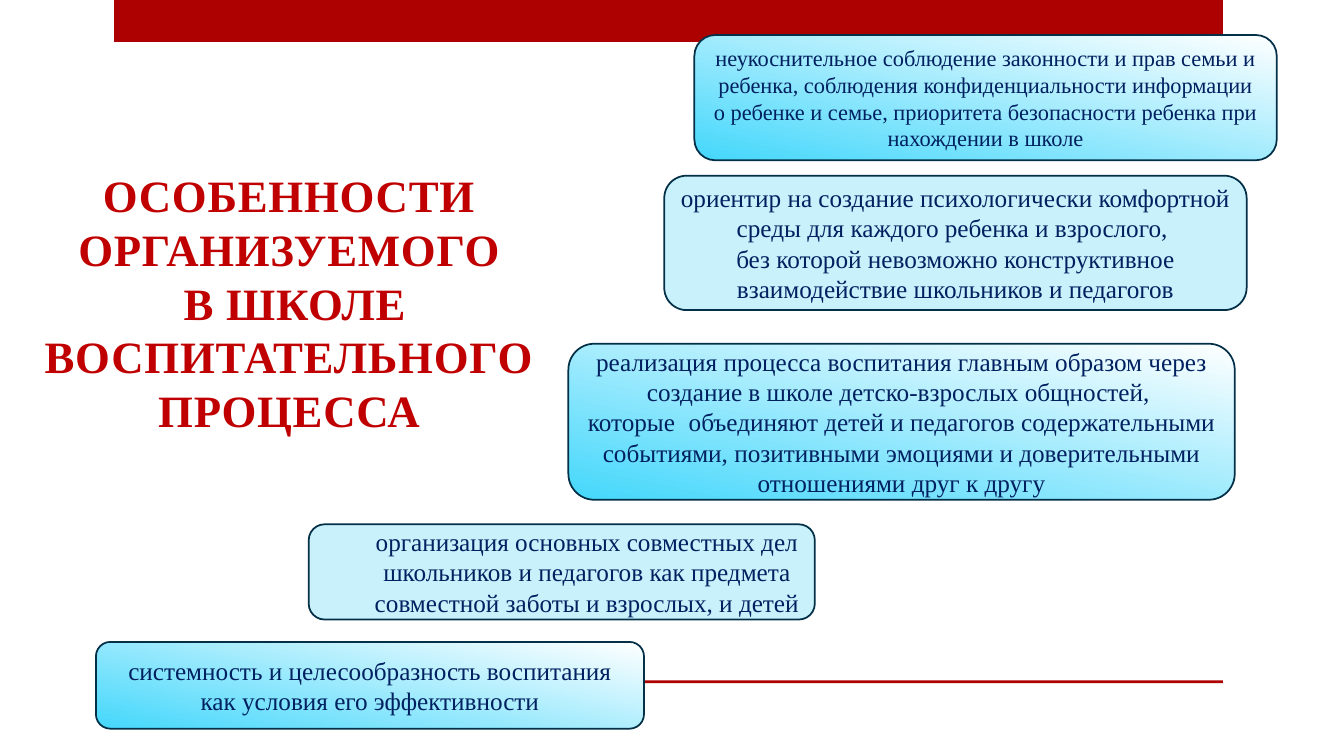
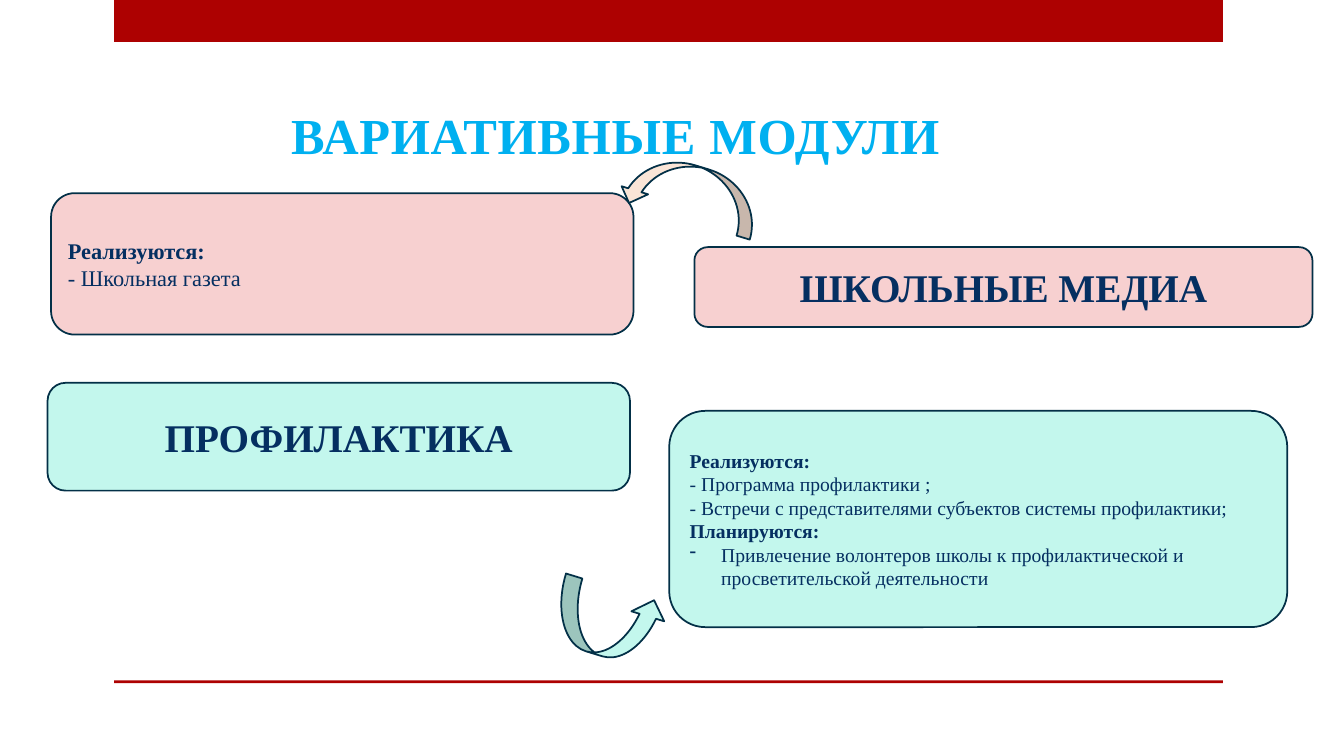
from lxml import etree
from pptx import Presentation
from pptx.dml.color import RGBColor
from pptx.enum.shapes import MSO_SHAPE as SHAPE
from pptx.enum.text import MSO_ANCHOR as ANCHOR, MSO_AUTO_SIZE as FIT, PP_ALIGN as ALIGN
from pptx.oxml.ns import qn
from pptx.util import Pt

FONT = "Times New Roman"
RED, EDGE, NAVY, INK = "AD0101", "033047", "002060", "052F61"
ICE, SKY, ROSE, MINT, PEACH = "C8F1FB", "44D7FB", "F7D0D0", "C3F7ED", "FAE5D7"
BLEND = ("FFFFFF", SKY)


def draw(slide, kind, at, fill, line=EDGE):
    """Add a shape; a pair of colours as fill makes a gradient."""
    shape = slide.shapes.add_shape(kind, *map(Pt, at))
    shape.shadow.inherit = False
    if isinstance(fill, tuple):
        shape.fill.gradient()
        shape.fill.gradient_angle = 258
        for stop, pos, tone in zip(shape.fill.gradient_stops, (0, 1), fill):
            stop.position = pos
            stop.color.rgb = RGBColor.from_string(tone)
    else:
        shape.fill.solid()
        shape.fill.fore_color.rgb = RGBColor.from_string(fill)
    if line:
        shape.line.color.rgb = RGBColor.from_string(line)
        shape.line.width = Pt(1.25)
    else:
        shape.line.fill.background()
    return shape


def write(shape, text, size, tone, align=ALIGN.CENTER, anchor=ANCHOR.MIDDLE):
    """Fill a shape with text; headings (capitals or a final colon) are bold."""
    frame = shape.text_frame
    frame.text = text
    frame.word_wrap = True
    frame.auto_size = FIT.NONE
    frame.vertical_anchor = anchor
    for para in frame.paragraphs:
        para.alignment = align
        for run in para.runs:
            font = run.font
            font.name, font.size = FONT, Pt(size)
            font.bold = run.text.isupper() or run.text.endswith(":")
            font.color.rgb = RGBColor.from_string(tone)
    return frame.paragraphs


prs = Presentation()
prs.slide_width, prs.slide_height = Pt(960), Pt(540)
layout = prs.slide_layouts[5]
for holder in list(layout.placeholders):
    if holder.placeholder_format.idx != 0:
        holder.element.getparent().remove(holder.element)

# Titles
titles = [
    ("ОСОБЕННОСТИ ОРГАНИЗУЕМОГО\n В ШКОЛЕ ВОСПИТАТЕЛЬНОГО ПРОЦЕССА",
     (-13, 114.5, 439, 201), 32, "C00000"),
    ("ВАРИАТИВНЫЕ МОДУЛИ", (138, 13.5, 603.5, 108), 36, "00B0F0"),
]
slides = []
for text, at, size, tone in titles:
    slide = prs.slides.add_slide(layout)
    title = slide.shapes.title
    title.left, title.top, title.width, title.height = map(Pt, at)
    for para in write(title, text, size, tone, anchor=ANCHOR.BOTTOM):
        for run in para.runs:
            run.font.bold = True
            run._r.get_or_add_rPr().set("spc", "50")
    slides.append(slide)
traits, modules = slides

# Bands shared through the layout
bands = [draw(traits, SHAPE.RECTANGLE, (81.5, top, 792, high), RED, None)
         for top, high in ((0, 30), (486, 2))]
for band in bands:
    layout.shapes.element.insert(2, band.element)

# Slide 1: traits of the process
cards = [
    ((496, 25, 416, 89.5), BLEND, 16,
     "неукоснительное соблюдение законности и прав семьи и ребенка, соблюдения "
     "конфиденциальности информации о ребенке и семье, приоритета безопасности "
     "ребенка при нахождении в школе"),
    ((474.5, 125.5, 416, 96), ICE, 18,
     "ориентир на создание психологически комфортной среды для каждого ребенка и взрослого, \n"
     "без которой невозможно конструктивное взаимодействие школьников и педагогов"),
    ((406, 245.5, 476, 111.5), BLEND, 18,
     "реализация процесса воспитания главным образом через создание в школе "
     "детско-взрослых общностей, \n"
     "которые\tобъединяют детей и педагогов содержательными событиями, позитивными "
     "эмоциями и доверительными отношениями друг к другу"),
    ((220.5, 374.5, 361.5, 68), ICE, 18,
     "организация основных совместных дел школьников и педагогов как предмета "
     "совместной заботы и взрослых, и детей"),
    ((68.5, 458.5, 391.5, 62), BLEND, 18,
     "системность и целесообразность воспитания как условия его эффективности"),
]
for at, fill, size, text in cards:
    card = draw(traits, SHAPE.FLOWCHART_ALTERNATE_PROCESS, at, fill)
    paras = write(card, text, size, NAVY)
    if text.startswith("организация"):
        paras[0]._p.get_or_add_pPr().set("marL", str(Pt(36)))

# Slide 2: modules and their content
blocks = [
    ((36.5, 138, 416, 101), ROSE, 16, ALIGN.LEFT, "Реализуются:\n- Школьная газета"),
    ((496, 176.5, 441.5, 57), ROSE, 28, ALIGN.CENTER, "ШКОЛЬНЫЕ МЕДИА"),
    ((34, 273.5, 416, 77), MINT, 28, ALIGN.CENTER, "ПРОФИЛАКТИКА"),
    ((478, 293.5, 441.5, 154.5), MINT, 14, ALIGN.LEFT,
     "Реализуются:\n- Программа профилактики ;\n"
     "- Встречи с представителями субъектов системы профилактики;\n"
     "Планируются:\n"
     "Привлечение волонтеров школы к профилактической и просветительской деятельности"),
]
for at, fill, size, align, text in blocks:
    block = draw(modules, SHAPE.FLOWCHART_ALTERNATE_PROCESS, at, fill)
    paras = write(block, text, size, INK, align)

# Dash bullet on the last line of the last block
props = paras[-1]._p.get_or_add_pPr()
props.set("marL", str(Pt(22.5)))
props.set("indent", str(-Pt(22.5)))
tint = etree.SubElement(props, qn("a:buClr"))
etree.SubElement(tint, qn("a:srgbClr")).set("val", INK)
etree.SubElement(props, qn("a:buChar")).set("char", "-")

arrows = [((443.5, 118, 100, 39.5), PEACH, "flipH"),
          ((395.5, 420, 78, 49), MINT, "flipV")]
for at, fill, flip in arrows:
    arrow = draw(modules, SHAPE.CURVED_DOWN_ARROW, at, fill)
    arrow.rotation = 16.9
    for num, part in enumerate((0.25, 0.5, 0.25)):
        arrow.adjustments[num] = part
    arrow.element.spPr.find(qn("a:xfrm")).set(flip, "1")

prs.save("out.pptx")
